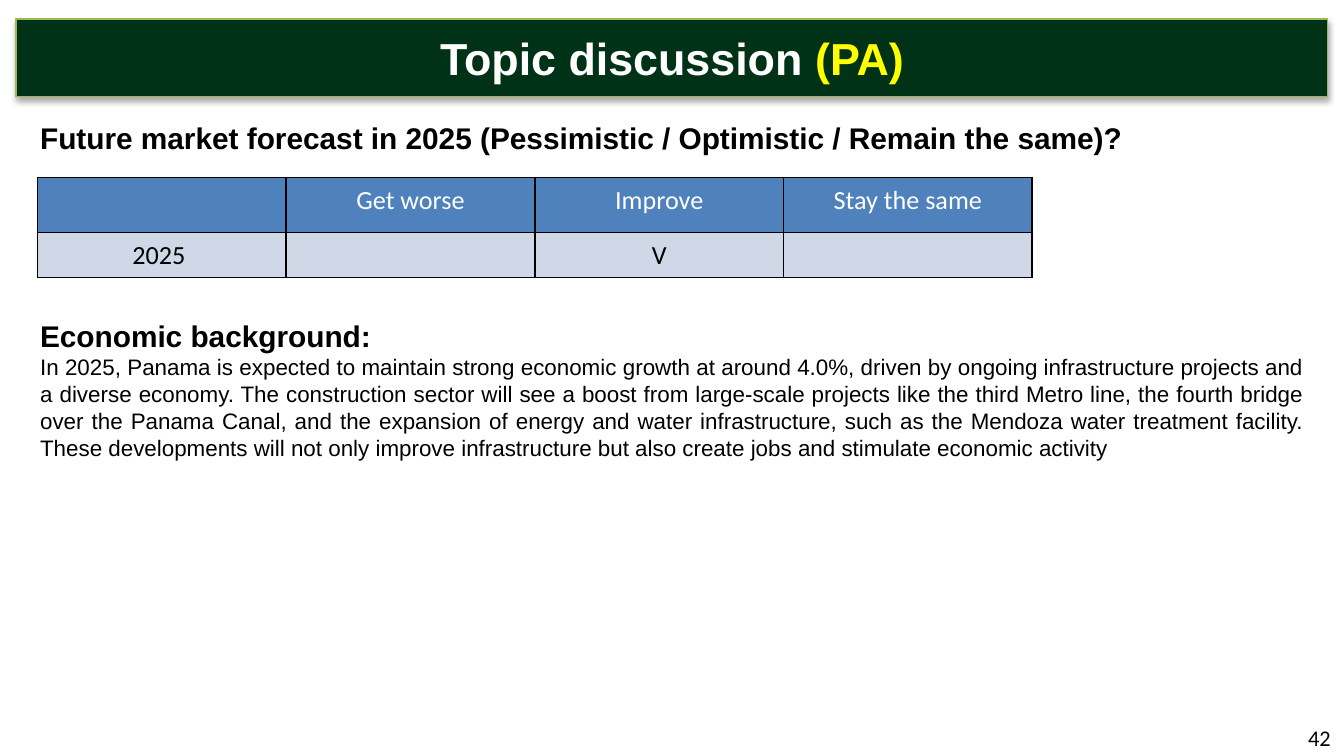
from lxml import etree
from pptx import Presentation
from pptx.dml.color import RGBColor
from pptx.enum.text import MSO_ANCHOR, PP_ALIGN
from pptx.oxml import parse_xml
from pptx.oxml.ns import nsdecls, qn
from pptx.util import Inches, Pt

LEFT, CENTER, RIGHT, JUSTIFY = (
    PP_ALIGN.LEFT, PP_ALIGN.CENTER, PP_ALIGN.RIGHT, PP_ALIGN.JUSTIFY)
MIDDLE = MSO_ANCHOR.MIDDLE

WIDTH = 10
HEIGHT = WIDTH * 9 / 16
BLACK, WHITE = "000000", "FFFFFF"

TITLE = [("Topic discussion ", WHITE), ("(PA)", "FFFF00")]
PAGE = "42"
# text, size, bold, alignment, space before
BODY = [
    ("Future market forecast in 2025 (Pessimistic / Optimistic / Remain the same)?",
     16, True, LEFT, 0),
    ("Economic background:", 16, True, LEFT, 87),
    ("In 2025, Panama is expected to maintain strong economic growth at around 4.0%, "
     "driven by ongoing infrastructure projects and a diverse economy. The construction "
     "sector will see a boost from large-scale projects like the third Metro line, the "
     "fourth bridge over the Panama Canal, and the expansion of energy and water "
     "infrastructure, such as the Mendoza water treatment facility. These developments "
     "will not only improve infrastructure but also create jobs and stimulate economic "
     "activity", 12, False, JUSTIFY, 0),
]
FORECAST = [["", "Get worse", "Improve", "Stay the same"],
            ["2025 ", "", "V", ""]]
ROW_STYLES = [("4F81BD", WHITE, 0.41), ("D0D8E8", BLACK, 0.33)]  # fill, text, height
COL_WIDTH = 1.85


def rgb(value):
    return RGBColor.from_string(value)


def style(font, name, size, color, bold=False):
    font.name, font.size, font.bold = name, Pt(size), bold
    font.color.rgb = rgb(color)


def place(s, *box):
    s.left, s.top, s.width, s.height = (Inches(v) for v in box)


def add_shadow(s):
    s._element.spPr.append(parse_xml(
        f'<a:effectLst {nsdecls("a")}><a:outerShdw blurRad="{Pt(3.1)}" dist="{Pt(1.8)}" '
        'dir="5400000" rotWithShape="0"><a:srgbClr val="000000"><a:alpha val="35000"/>'
        '</a:srgbClr></a:outerShdw></a:effectLst>'))


def add_borders(cell):
    tcPr = cell._tc.get_or_add_tcPr()
    for i, side in enumerate(("lnL", "lnR", "lnT", "lnB")):
        ln = etree.Element(qn(f"a:{side}"), w=str(Pt(1)))
        fill = etree.SubElement(ln, qn("a:solidFill"))
        etree.SubElement(fill, qn("a:srgbClr"), val=BLACK)
        tcPr.insert(i, ln)


def add_title(slide):
    s = slide.shapes.title
    place(s, 0.12, 0.14, WIDTH - 2 * 0.12, 0.58)
    s.fill.solid()
    s.fill.fore_color.rgb = rgb("003217")
    s.line.color.rgb = rgb("98B955")
    s.line.width = Pt(0.75)
    add_shadow(s)
    tf = s.text_frame
    tf.margin_left = tf.margin_right = tf.margin_top = tf.margin_bottom = 0
    tf.vertical_anchor = MIDDLE
    p = tf.paragraphs[0]
    p.alignment = CENTER
    for text, color in TITLE:
        r = p.add_run()
        r.text = text
        style(r.font, "Arial", 24, color, True)


def add_text(slide, box, paragraphs, font):
    s = slide.shapes.add_textbox(*(Inches(v) for v in box))
    tf = s.text_frame
    tf.word_wrap = True
    tf.text = "\n".join(row[0] for row in paragraphs)
    for p, (_, size, bold, align, before) in zip(tf.paragraphs, paragraphs):
        p.alignment = align
        p.space_before = Pt(before)
        style(p.runs[0].font, font, size, BLACK, bold)


def add_forecast(slide):
    rows, cols = len(FORECAST), len(FORECAST[0])
    table = slide.shapes.add_table(
        rows, cols, Inches(0.28), Inches(1.32), Inches(cols * COL_WIDTH),
        Inches(sum(height for _, _, height in ROW_STYLES))).table
    for i, (fill, color, height) in enumerate(ROW_STYLES):
        table.rows[i].height = Inches(height)
        for j, text in enumerate(FORECAST[i]):
            cell = table.cell(i, j)
            cell.fill.solid()
            cell.fill.fore_color.rgb = rgb(fill)
            add_borders(cell)
            if not text:  # keeps the default font from stretching the row
                cell.margin_top = cell.margin_bottom = 0
                continue
            cell.text = text
            p = cell.text_frame.paragraphs[0]
            p.alignment = CENTER
            style(p.runs[0].font, "Calibri", 14, color)


def main():
    prs = Presentation()
    prs.slide_width, prs.slide_height = Inches(WIDTH), Inches(HEIGHT)
    slide = prs.slides.add_slide(prs.slide_layouts[5])
    add_title(slide)
    add_text(slide, (7.67, 5.34, 2.33, 0.3), [(PAGE, 12, False, RIGHT, 0)], "Calibri")
    add_text(slide, (0.2, 0.84, 9.61, 4.51), BODY, "Arial")
    add_forecast(slide)
    prs.save("out.pptx")


if __name__ == "__main__":
    main()
